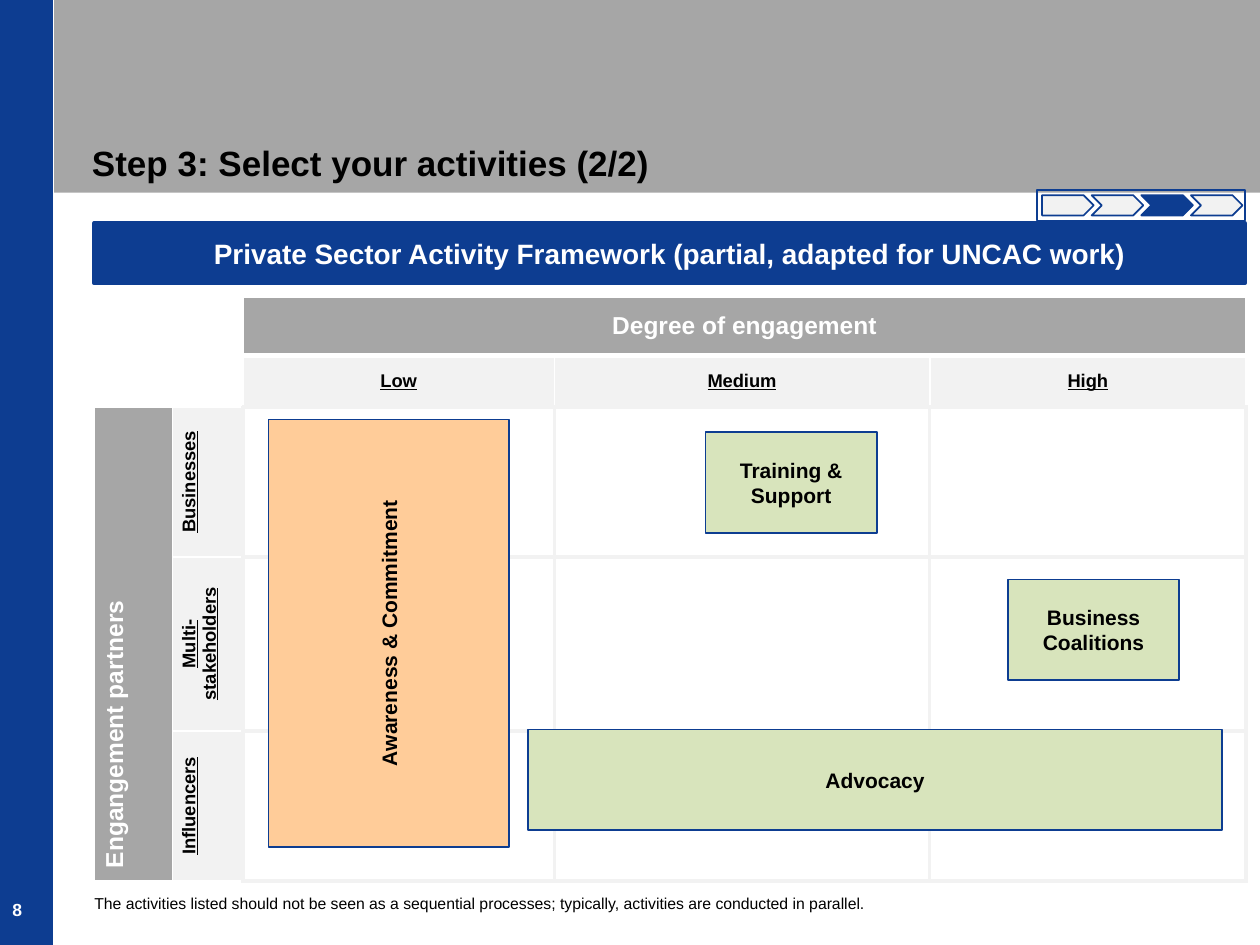
from lxml.etree import SubElement
from pptx import Presentation
from pptx.dml.color import RGBColor
from pptx.enum.shapes import MSO_SHAPE as Shape
from pptx.enum.text import MSO_ANCHOR as Anchor, PP_ALIGN as Align
from pptx.oxml.ns import qn
from pptx.util import Inches, Pt

BLUE = RGBColor(0x0D, 0x3D, 0x91)
GRAY = RGBColor(0xA6, 0xA6, 0xA6)
PALE = RGBColor(0xF2, 0xF2, 0xF2)
GREEN = RGBColor(0xD8, 0xE4, 0xBC)
ORANGE = RGBColor(0xFF, 0xCC, 0x99)
WHITE = RGBColor(0xFF, 0xFF, 0xFF)
BLACK = RGBColor(0, 0, 0)

COLUMNS = (0.62, 0.56, 2.47, 2.98, 2.51)
ROWS = (0.46, 0.41, 1.19, 1.19, 1.19)
DEGREES = ("Low", "Medium", "High")
PARTNERS = ("Businesses", "Multi-stakeholders", "Influencers")
ACTIVITIES = (
    ("Business Coalitions", (8, 4.6, 1.36, 0.8), GREEN, False),
    ("Advocacy", (4.19, 5.79, 5.51, 0.8), GREEN, False),
    ("Training & Support", (5.6, 3.43, 1.36, 0.8), GREEN, False),
    ("Awareness & Commitment", (2.13, 3.33, 1.91, 3.39), ORANGE, True),
)


def inches(box):
    """Convert a left, top, width, height box to lengths."""
    return [Inches(v) for v in box]


def write(tf, text, size, color=BLACK, bold=True, align=Align.LEFT, underline=None):
    """Write one formatted run into the first paragraph of a text frame."""
    p = tf.paragraphs[0]
    p.alignment = align
    p.space_before = Pt(0)
    r = p.add_run()
    r.text = text
    r.font.name = "Arial"
    r.font.size = Pt(size)
    r.font.bold = bold
    r.font.underline = underline
    r.font.color.rgb = color


def add_block(s, box, fill=None, line=None, width=1, kind=Shape.RECTANGLE):
    """Add a flat preset shape."""
    sp = s.shapes.add_shape(kind, *inches(box))
    sp.shadow.inherit = False
    if fill is None:
        sp.fill.background()
    else:
        sp.fill.solid()
        sp.fill.fore_color.rgb = fill
    if line is None:
        sp.line.fill.background()
    else:
        sp.line.color.rgb = line
        sp.line.width = Pt(width)
    return sp


def add_label(s, box, text, size, color=BLACK, bold=True, anchor=Anchor.TOP):
    """Add a wrapping text box."""
    tf = s.shapes.add_textbox(*inches(box)).text_frame
    tf.word_wrap = True
    tf.vertical_anchor = anchor
    write(tf, text, size, color, bold)


def add_title(s, box, text):
    """Place the title placeholder above the page frame."""
    sp = s.shapes.title
    sp.left, sp.top, sp.width, sp.height = inches(box)
    sp.text_frame.vertical_anchor = Anchor.BOTTOM
    write(sp.text_frame, text, 20)
    sp.element.getparent().append(sp.element)


def add_banner(s, box, text):
    """Add the framework heading bar."""
    tf = add_block(s, box, BLUE, BLUE, 2.25).text_frame
    tf.word_wrap = True
    tf.vertical_anchor = Anchor.MIDDLE
    write(tf, text, 16, WHITE, align=Align.CENTER)


def add_activity(s, box, text, fill, vertical):
    """Add an activity box over the matrix."""
    tf = add_block(s, box, fill, BLUE).text_frame
    tf.word_wrap = True
    tf.vertical_anchor = Anchor.MIDDLE
    tf.margin_left = tf.margin_right = Inches(0.04)
    tf.margin_top = tf.margin_bottom = Inches(0.08)
    if vertical:
        tf._txBody.find(qn("a:bodyPr")).set("vert", "vert270")
    write(tf, text, 12, align=Align.CENTER)


def add_tracker(s, box, current):
    """Add the four-step progress tracker with the current step filled."""
    left, top, _, _ = box
    for i in range(4):
        kind = Shape.CHEVRON if i else Shape.PENTAGON
        fill = BLUE if i == current else PALE
        step = (left + 0.04 + 0.394 * i, top + 0.04, 0.41, 0.16)
        add_block(s, step, fill, BLUE, kind=kind)
    add_block(s, box, line=BLUE)


def style_cell(cell, fill, **borders):
    """Fill a cell and draw its borders, pale unless given."""
    tc_pr = cell._tc.get_or_add_tcPr()
    for side in "LRTB":
        color, width = borders.get(side, borders.get("every", (PALE, 2.25)))
        ln = SubElement(tc_pr, qn(f"a:ln{side}"), w=str(Pt(width)))
        solid = SubElement(ln, qn("a:solidFill"))
        SubElement(solid, qn("a:srgbClr"), val=str(color))
    cell.fill.solid()
    cell.fill.fore_color.rgb = fill


def write_cell(cell, text, size, color, anchor=Anchor.MIDDLE, vertical=False, **font):
    """Write a heading into a cell."""
    cell.vertical_anchor = anchor
    if vertical:
        cell._tc.get_or_add_tcPr().set("vert", "vert270")
    write(cell.text_frame, text, size, color, **font)


def add_matrix(s, box):
    """Add the engagement matrix table."""
    table = s.shapes.add_table(len(ROWS), len(COLUMNS), *inches(box)).table
    table.first_row = table.horz_banding = False
    for column, width in zip(table.columns, COLUMNS):
        column.width = Inches(width)
    for row, height in zip(table.rows, ROWS):
        row.height = Inches(height)

    thin, thick, pale = (WHITE, 1), (WHITE, 3), (PALE, 2.25)
    for r in range(len(ROWS)):
        for c in range(len(COLUMNS)):
            cell = table.cell(r, c)
            if r == 0:
                style_cell(cell, GRAY if c > 1 else WHITE, every=thin, B=thick)
            elif r == 1 and c > 1:
                style_cell(cell, PALE, every=thin, B=pale)
            elif r == 1:
                style_cell(cell, WHITE, every=thin)
            elif c == 0:
                style_cell(cell, GRAY, every=thin)
            elif c == 1:
                style_cell(cell, PALE, every=thin, R=pale)
            else:
                style_cell(cell, WHITE)

    table.cell(0, 2).merge(table.cell(0, 4))
    table.cell(2, 0).merge(table.cell(4, 0))
    write_cell(table.cell(0, 2), "Degree of engagement", 14, WHITE, align=Align.CENTER)
    write_cell(table.cell(2, 0), "Engangement partners", 14, WHITE, vertical=True)
    for i, (degree, partner) in enumerate(zip(DEGREES, PARTNERS), start=2):
        write_cell(table.cell(1, i), degree, 10.5, BLACK,
                   align=Align.CENTER, underline=True)
        write_cell(table.cell(i, 1), partner, 10.5, BLACK, Anchor.BOTTOM, True,
                   align=Align.CENTER, underline=True)


def add_frame(s):
    """Add the side bar, the title band and the page number."""
    add_block(s, (-0.09, 0, 0.51, 7.5), BLUE)
    add_block(s, (0.43, 0, 9.61, 1.53), GRAY)
    add_label(s, (0, 6.83, 0.53, 0.52), "8", 10, WHITE, anchor=Anchor.BOTTOM)


def main():
    """Build and save the slide."""
    prs = Presentation()
    prs.slide_width, prs.slide_height = Inches(10), Inches(7.5)
    s = prs.slides.add_slide(prs.slide_layouts[5])
    add_frame(s)
    add_title(s, (0.63, 0.36, 6.81, 1.15), "Step 3: Select your activities (2/2)")
    add_matrix(s, (0.75, 2.36, 9.13, 4.45))
    for text, box, fill, vertical in ACTIVITIES:
        add_activity(s, box, text, fill, vertical)
    add_banner(s, (0.75, 1.77, 9.13, 0.48),
               "Private Sector Activity Framework (partial, adapted for UNCAC work)")
    add_label(s, (0.65, 7.04, 6.71, 0.25),
              "The activities listed should not be seen as a sequential processes; "
              "typically, activities are conducted in parallel.", 9, bold=False)
    add_tracker(s, (8.23, 1.51, 1.65, 0.24), current=2)
    prs.save("out.pptx")


if __name__ == "__main__":
    main()
